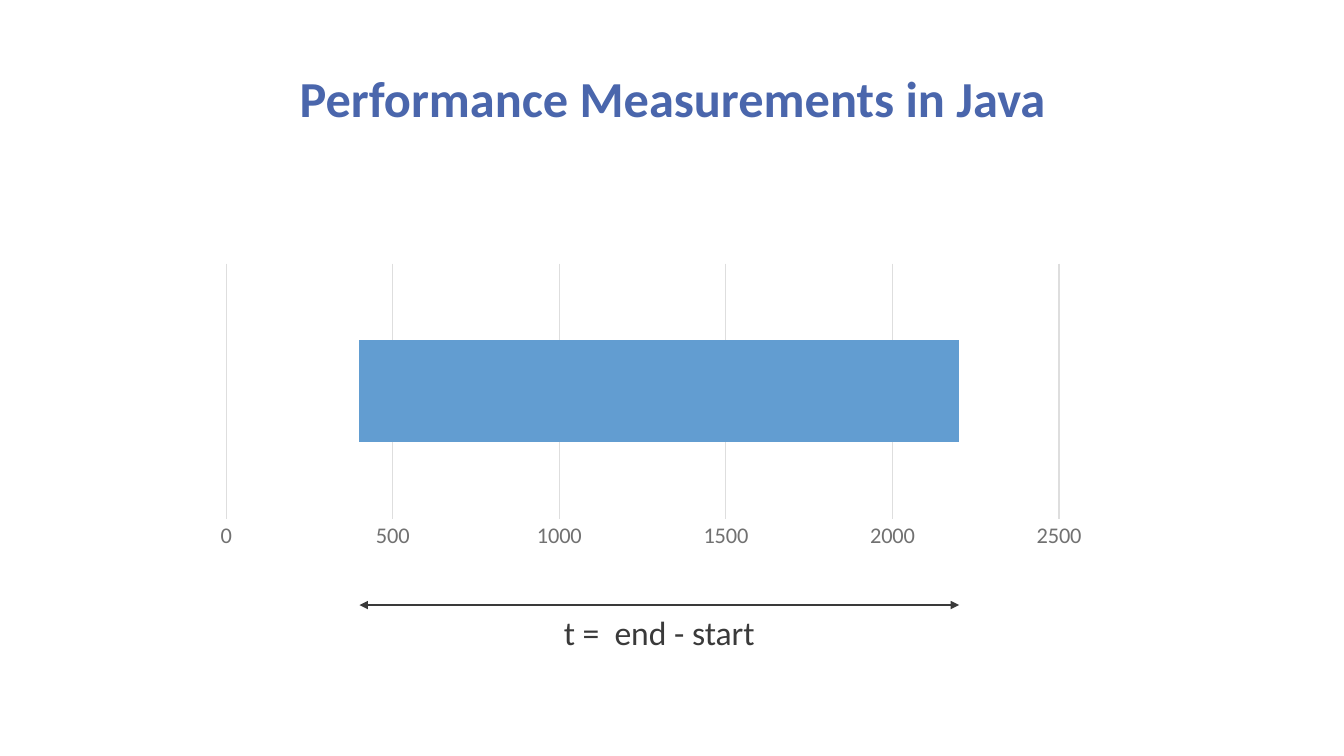
from lxml import etree
from pptx import Presentation
from pptx import util as u
from pptx.chart.data import CategoryChartData
from pptx.dml.color import RGBColor
from pptx.enum import chart as charts, shapes, text
from pptx.oxml import parse_xml
from pptx.oxml.ns import nsdecls, qn

WIDTH, HEIGHT = 13.33, 7.5
FONT = "Calibri"
TITLE_BLUE = RGBColor(0x4A, 0x66, 0xAC)
BAR_BLUE = RGBColor(0x62, 0x9D, 0xD1)
AXIS_GREY = RGBColor(0x71, 0x71, 0x71)
GRID_GREY = RGBColor(0xDE, 0xDE, 0xDE)
INK = RGBColor(0x3A, 0x3A, 0x3A)

START, DURATION, AXIS_MAX, AXIS_STEP = 400, 1800, 2500, 500
PLOT = {"x": 0.026, "y": 0.02, "w": 0.929, "h": 0.852}


def share(left, top, width, height):
    """Return a box in inches from shares of the slide's size."""
    return left * WIDTH, top * HEIGHT, width * WIDTH, height * HEIGHT


def add_text(page, box, wording, size, color, anchor, bold=False, spacing=1.0):
    """Place one centred line of text in the box."""
    frame = page.shapes.add_textbox(*map(u.Inches, box)).text_frame
    frame.word_wrap = True
    frame.vertical_anchor = anchor
    para = frame.paragraphs[0]
    para.text = wording
    para.alignment = text.PP_ALIGN.CENTER
    para.line_spacing = spacing
    para.font.name, para.font.size, para.font.bold = FONT, u.Pt(size), bold
    para.font.color.rgb = color


def fix_plot_area(chart):
    """Pin the inner plot area to its shares of the chart box."""
    area = chart._chartSpace.chart.plotArea
    for layout in area.findall(qn("c:layout")):
        area.remove(layout)
    modes = "".join(f'<c:{side}Mode val="edge"/>' for side in "xy")
    sizes = "".join(f'<c:{side} val="{value}"/>' for side, value in PLOT.items())
    area.insert(0, parse_xml(
        f'<c:layout {nsdecls("c")}><c:manualLayout><c:layoutTarget val="inner"/>'
        f"{modes}{sizes}</c:manualLayout></c:layout>"))


def add_timeline(page, box):
    """Draw the stacked bar whose hidden first part offsets the measured time."""
    data = CategoryChartData()
    data.categories = ["1"]
    data.add_series("Series 1", [START])
    data.add_series("Series 2", [DURATION])
    chart = page.shapes.add_chart(
        charts.XL_CHART_TYPE.BAR_STACKED, *map(u.Inches, box), data).chart
    chart.has_legend = chart.has_title = False
    chart.font.name, chart.font.size = FONT, u.Pt(16)
    chart.font.color.rgb = AXIS_GREY
    plot = chart.plots[0]
    plot.gap_width, plot.overlap, plot.vary_by_categories = 150, 100, False
    offset, measured = plot.series
    offset.format.fill.background()
    measured.format.fill.solid()
    measured.format.fill.fore_color.rgb = BAR_BLUE
    chart.category_axis.visible = False
    axis = chart.value_axis
    axis.minimum_scale, axis.maximum_scale, axis.major_unit = 0, AXIS_MAX, AXIS_STEP
    axis.major_tick_mark = axis.minor_tick_mark = charts.XL_TICK_MARK.NONE
    axis.format.line.fill.background()
    axis.has_major_gridlines = True
    grid = axis.major_gridlines.format.line
    grid.color.rgb, grid.width = GRID_GREY, u.Pt(0.75)
    fix_plot_area(chart)


def add_duration(page, box):
    """Mark the measured span with a double arrow and its formula below the chart box."""
    left, top, width, height = box
    scale = PLOT["w"] * width / AXIS_MAX
    begin = left + PLOT["x"] * width + START * scale
    end = begin + DURATION * scale
    level = top + 1.16 * height
    arrow = page.shapes.add_connector(
        shapes.MSO_CONNECTOR.STRAIGHT, *map(u.Inches, (begin, level, end, level)))
    arrow.line.color.rgb, arrow.line.width = INK, u.Pt(2)
    outline = arrow.line._get_or_add_ln()
    for tip in ("a:headEnd", "a:tailEnd"):
        etree.SubElement(outline, qn(tip), type="triangle")
    etree.SubElement(arrow._element.spPr, qn("a:effectLst"))
    add_text(page, (begin, level + 0.02, end - begin, 0.5), "t =  end - start",
             24, INK, text.MSO_ANCHOR.TOP)


def main():
    """Build the slide and save the deck."""
    deck = Presentation()
    deck.slide_width, deck.slide_height = u.Inches(WIDTH), u.Inches(HEIGHT)
    page = deck.slides.add_slide(deck.slide_layouts[6])
    add_text(page, share(0.107, 0.057, 0.787, 0.119),
             "Performance Measurements in Java", 36, TITLE_BLUE,
             text.MSO_ANCHOR.BOTTOM, bold=True, spacing=0.9)
    chart_box = share(0.151, 0.341, 0.667, 0.396)
    add_timeline(page, chart_box)
    add_duration(page, chart_box)
    deck.save("out.pptx")


if __name__ == "__main__":
    main()
